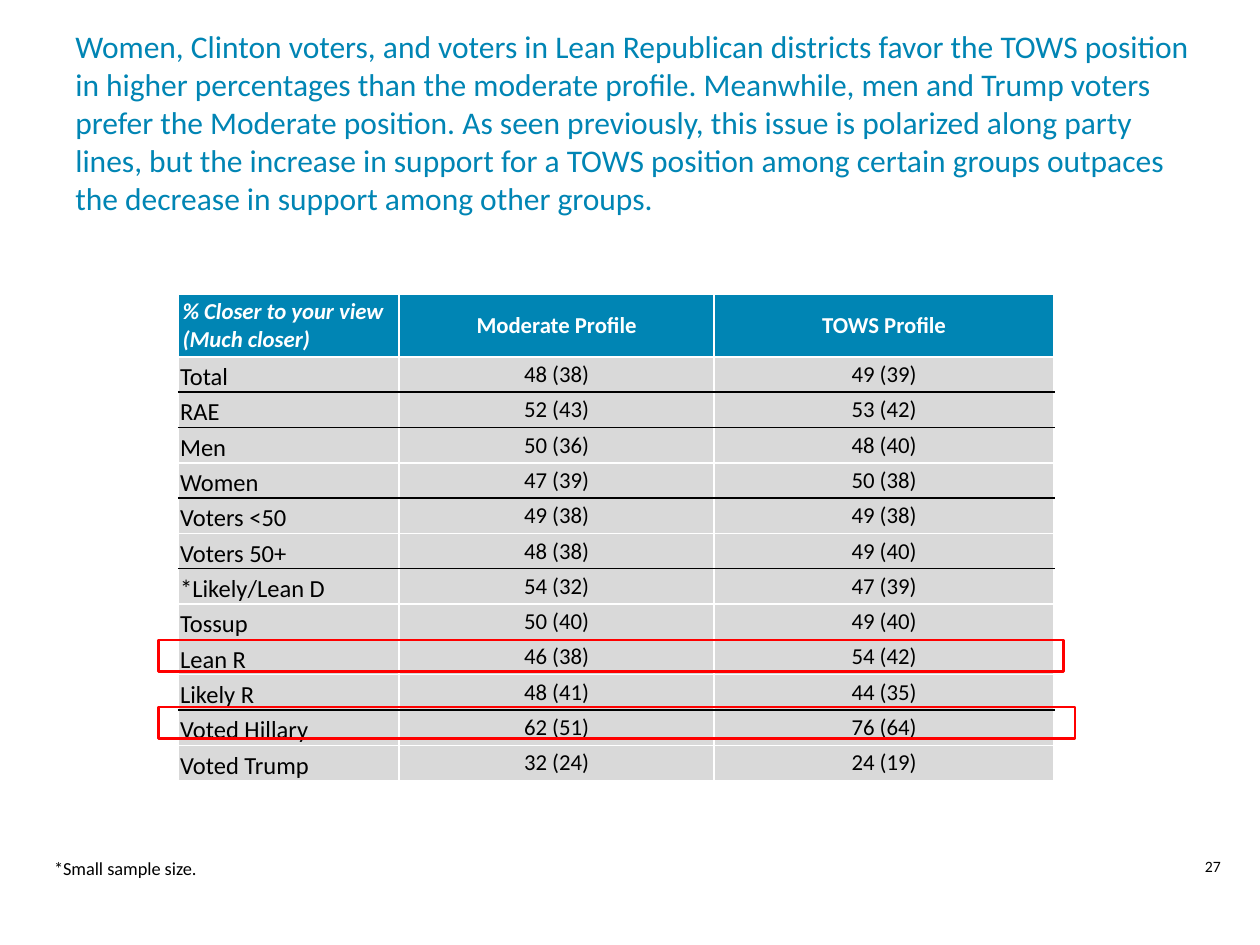
from lxml.etree import SubElement
from pptx import Presentation
from pptx.dml.color import RGBColor
from pptx.enum.shapes import MSO_SHAPE
from pptx.enum.text import MSO_ANCHOR, PP_ALIGN
from pptx.oxml.ns import qn
from pptx.util import Cm, Pt

BLUE = RGBColor(0x00, 0x85, 0xB4)
GREY = RGBColor(0xD9, 0xD9, 0xD9)
RED = RGBColor(0xFF, 0x00, 0x00)
BLACK = RGBColor(0x00, 0x00, 0x00)
WHITE = RGBColor(0xFF, 0xFF, 0xFF)

TITLE = (
    "Women, Clinton voters, and voters in Lean Republican districts favor the TOWS "
    "position in higher percentages than the moderate profile. Meanwhile, men and Trump "
    "voters prefer the Moderate position. As seen previously, this issue is polarized "
    "along party lines, but the increase in support for a TOWS position among certain "
    "groups outpaces the decrease in support among other groups."
)
ROWS = [
    ("% Closer to your view (Much closer)", "Moderate Profile", "TOWS Profile"),
    ("Total", "48 (38)", "49 (39)"),
    ("RAE", "52 (43)", "53 (42)"),
    ("Men", "50 (36)", "48 (40)"),
    ("Women", "47 (39)", "50 (38)"),
    ("Voters <50", "49 (38)", "49 (38)"),
    ("Voters 50+", "48 (38)", "49 (40)"),
    ("*Likely/Lean D", "54 (32)", "47 (39)"),
    ("Tossup", "50 (40)", "49 (40)"),
    ("Lean R", "46 (38)", "54 (42)"),
    ("Likely R", "48 (41)", "44 (35)"),
    ("Voted Hillary", "62 (51)", "76 (64)"),
    ("Voted Trump", "32 (24)", "24 (19)"),
]
GROUP_ENDS = {"Total", "RAE", "Women", "Voters 50+", "Likely R"}
COLUMN_SHARES = (1.75, 2.5, 2.7)
HEADER_HEIGHT = 1.26


def write(tf, text, align=PP_ALIGN.LEFT, color=BLACK, **formats):
    """Put one formatted run into the first paragraph of a text frame."""
    p = tf.paragraphs[0]
    p.alignment = align
    r = p.add_run()
    r.text = text
    r.font.color.rgb = color
    for name, value in {"name": "Calibri", **formats}.items():
        setattr(r.font, name, value)


def add_text(s, box, text, **formats):
    """Add a wrapped text box that fills the given box."""
    tf = s.shapes.add_textbox(*map(Cm, box)).text_frame
    tf.word_wrap = True
    write(tf, text, **formats)


def set_borders(cell, top, bottom):
    """Draw the four cell borders, white at the sides."""
    tc_pr = cell._tc.get_or_add_tcPr()
    for side, color in {"L": WHITE, "R": WHITE, "T": top, "B": bottom}.items():
        ln = SubElement(tc_pr, qn(f"a:ln{side}"), w=str(Pt(1)))
        SubElement(SubElement(ln, qn("a:solidFill")), qn("a:srgbClr"), val=str(color))


def format_cell(cell, text, is_header, is_label):
    """Fill one cell and write its text by the role of its row and column."""
    row_label = is_label and not is_header
    inset = Cm(0.03 if row_label else 0.08)
    values = {
        "margin_left": inset,
        "margin_right": inset,
        "margin_top": inset,
        "margin_bottom": 0 if row_label else inset,
        "vertical_anchor": MSO_ANCHOR.BOTTOM if row_label else MSO_ANCHOR.MIDDLE,
    }
    for name, value in values.items():
        setattr(cell, name, value)
    cell.fill.solid()
    cell.fill.fore_color.rgb = BLUE if is_header else GREY
    write(
        cell.text_frame,
        text,
        align=PP_ALIGN.LEFT if is_label else PP_ALIGN.CENTER,
        color=WHITE if is_header else BLACK,
        size=Pt(14 if row_label else 13),
        bold=is_header,
        italic=is_header and is_label,
    )


def add_results(s, box):
    """Add the table of results inside the given box."""
    width, height = box[2:]
    frame = s.shapes.add_table(len(ROWS), len(COLUMN_SHARES), *map(Cm, box))
    table = frame.table
    for column, share in zip(table.columns, COLUMN_SHARES):
        column.width = Cm(width * share / sum(COLUMN_SHARES))
    body_height = (height - HEADER_HEIGHT) / (len(ROWS) - 1)
    top = WHITE
    for i, row in enumerate(ROWS):
        table.rows[i].height = Cm(body_height if i else HEADER_HEIGHT)
        bottom = BLACK if row[0] in GROUP_ENDS else WHITE
        for j, text in enumerate(row):
            cell = table.cell(i, j)
            set_borders(cell, top, bottom)
            format_cell(cell, text, i == 0, j == 0)
        top = bottom


def add_highlight(s, box):
    """Outline the given box in red."""
    sp = s.shapes.add_shape(MSO_SHAPE.RECTANGLE, *map(Cm, box))
    sp.shadow.inherit = False
    sp.fill.background()
    sp.line.color.rgb = RED
    sp.line.width = Pt(1.5)


def main():
    """Build the slide and save it."""
    prs = Presentation()
    prs.slide_width, prs.slide_height = Cm(25.4), Cm(19.05)
    s = prs.slides.add_slide(prs.slide_layouts[6])
    add_text(s, (23.5, 17.15, 1.9, 0.84), "27", align=PP_ALIGN.CENTER, size=Pt(9))
    add_results(s, (3.6, 5.93, 17.65, 9.8))
    add_text(s, (1.27, 0.43, 23.16, 4.11), TITLE, color=BLUE, size=Pt(18))
    add_highlight(s, (3.2, 12.9, 18.24, 0.64))
    add_highlight(s, (3.2, 14.25, 18.47, 0.64))
    add_text(s, (0.84, 17.15, 18.62, 0.71), "*Small sample size.", size=Pt(10.5))
    prs.save("out.pptx")


if __name__ == "__main__":
    main()
